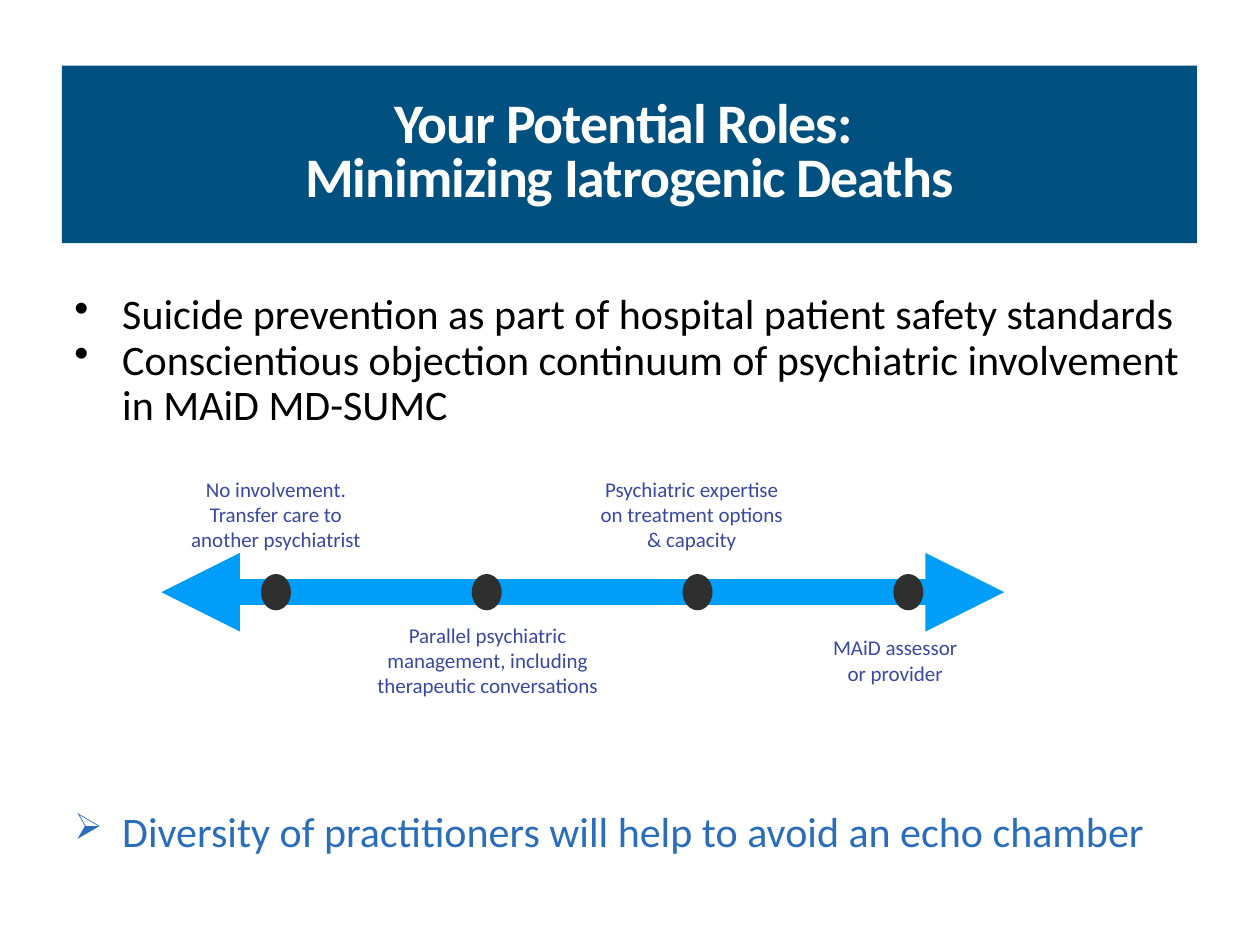
from lxml.etree import SubElement
from pptx import Presentation
from pptx.dml.color import RGBColor
from pptx.enum.shapes import MSO_CONNECTOR, MSO_SHAPE
from pptx.enum.text import MSO_ANCHOR, PP_ALIGN
from pptx.oxml.ns import qn
from pptx.util import Inches, Pt

COLORS = {
    "banner": "005180", "white": "FFFFFF", "body": "000000", "closing": "2A6EBB",
    "axis": "009EF9", "dot": "2F2F2F", "label": "3848A3",
}
FONT = "Calibri"
CELL = Inches(0.1)  # the slide is a grid of 100 columns by 75 rows


def grid(*cells):
    return [round(c * CELL) for c in cells]


def color(name):
    return RGBColor.from_string(COLORS[name])


class SlideBuilder:
    def __init__(self, prs):
        self.s = prs.slides.add_slide(prs.slide_layouts[6])

    def set_text(self, sp, lines, size, ink, align=PP_ALIGN.LEFT, spacing=1.0,
                 inset=None, bold=False):
        tf = sp.text_frame
        tf.word_wrap = True
        if inset is not None:
            tf.margin_left = tf.margin_right = Inches(inset)
            tf.margin_top = tf.margin_bottom = Inches(inset)
        tf.text = "\n".join(lines)
        for p in tf.paragraphs:
            p.alignment, p.line_spacing = align, spacing
            for r in p.runs:
                r.font.name, r.font.size, r.font.bold = FONT, Pt(size), bold
                r.font.color.rgb = color(ink)
        return tf

    def shape(self, kind, box, fill, line_width=0):
        sp = self.s.shapes.add_shape(kind, *grid(*box))
        sp.shadow.inherit = False
        sp.fill.solid()
        sp.fill.fore_color.rgb = color(fill)
        if line_width:
            sp.line.color.rgb = color(fill)
            sp.line.width = Pt(line_width)
        else:
            sp.line.fill.background()
        return sp

    def banner(self, box, text):
        sp = self.shape(MSO_SHAPE.RECTANGLE, box, "banner")
        tf = self.set_text(sp, [text], 31.9, "white", PP_ALIGN.CENTER, 0.8, 0.06, True)
        tf.vertical_anchor = MSO_ANCHOR.MIDDLE
        for r in tf.paragraphs[0].runs:
            r.font._element.set("spc", "-60")

    def bullets(self, box, lines, ink, char, percent=100):
        sp = self.s.shapes.add_textbox(*grid(*box))
        tf = self.set_text(sp, lines, 24, ink, spacing=0.9, inset=0.05)
        for p in tf.paragraphs:
            pPr = p._p.get_or_add_pPr()
            pPr.set("marL", str(Inches(0.38)))
            pPr.set("indent", str(-Inches(0.38)))
            SubElement(pPr, qn("a:buSzPct"), val=str(percent * 1000))
            SubElement(pPr, qn("a:buChar"), char=char)

    def label(self, box, text):
        sp = self.s.shapes.add_textbox(*grid(*box))
        self.set_text(sp, [text], 12, "label", PP_ALIGN.CENTER)

    def double_arrow(self, x1, x2, y):
        line = self.s.shapes.add_connector(MSO_CONNECTOR.STRAIGHT, *grid(x1, y, x2, y))
        line.line.color.rgb = color("axis")
        line.line.width = Pt(15)
        ln = line.line._get_or_add_ln()
        for end in ("a:headEnd", "a:tailEnd"):
            SubElement(ln, qn(end), type="triangle")
        SubElement(line._element.spPr, qn("a:effectLst"))

    def dot(self, cx, cy, width=2.1, height=2.6):
        box = (cx - width / 2, cy - height / 2, width, height)
        self.shape(MSO_SHAPE.OVAL, box, "dot", 2)


def main():
    prs = Presentation()
    prs.slide_width, prs.slide_height = grid(100, 75)
    b = SlideBuilder(prs)

    # Title and main points
    b.banner((4.9, 5.2, 90.1, 14.1),
             "Your Potential Roles: \vMinimizing Iatrogenic Deaths")
    b.bullets((5.4, 22.8, 90.1, 12), [
        "Suicide prevention as part of hospital patient safety standards",
        "Conscientious objection continuum of psychiatric involvement in MAiD MD-SUMC",
    ], "body", "•")

    # Continuum with evenly spaced stages
    axis_y, first, step = 47, 21.9, 16.73
    b.double_arrow(12.8, 79.7, axis_y)
    stages = [
        ((14, 37.3, 15.8, 7.1), "No involvement. Transfer care to another psychiatrist"),
        ((28.1, 48.9, 21.2, 7.1),
         "Parallel psychiatric management, including therapeutic conversations"),
        ((46.3, 37.3, 17.2, 7.1), "Psychiatric expertise on treatment options & capacity"),
        ((65, 49.9, 12.1, 5), "MAiD assessor or provider"),
    ]
    for i, (box, text) in enumerate(stages):
        b.dot(first + i * step, axis_y)
        b.label(box, text)

    # Closing message
    b.bullets((5.4, 63.9, 90.1, 5), [
        "Diversity of practitioners will help to avoid an echo chamber",
    ], "closing", "➢", 86)

    prs.save("out.pptx")


if __name__ == "__main__":
    main()
